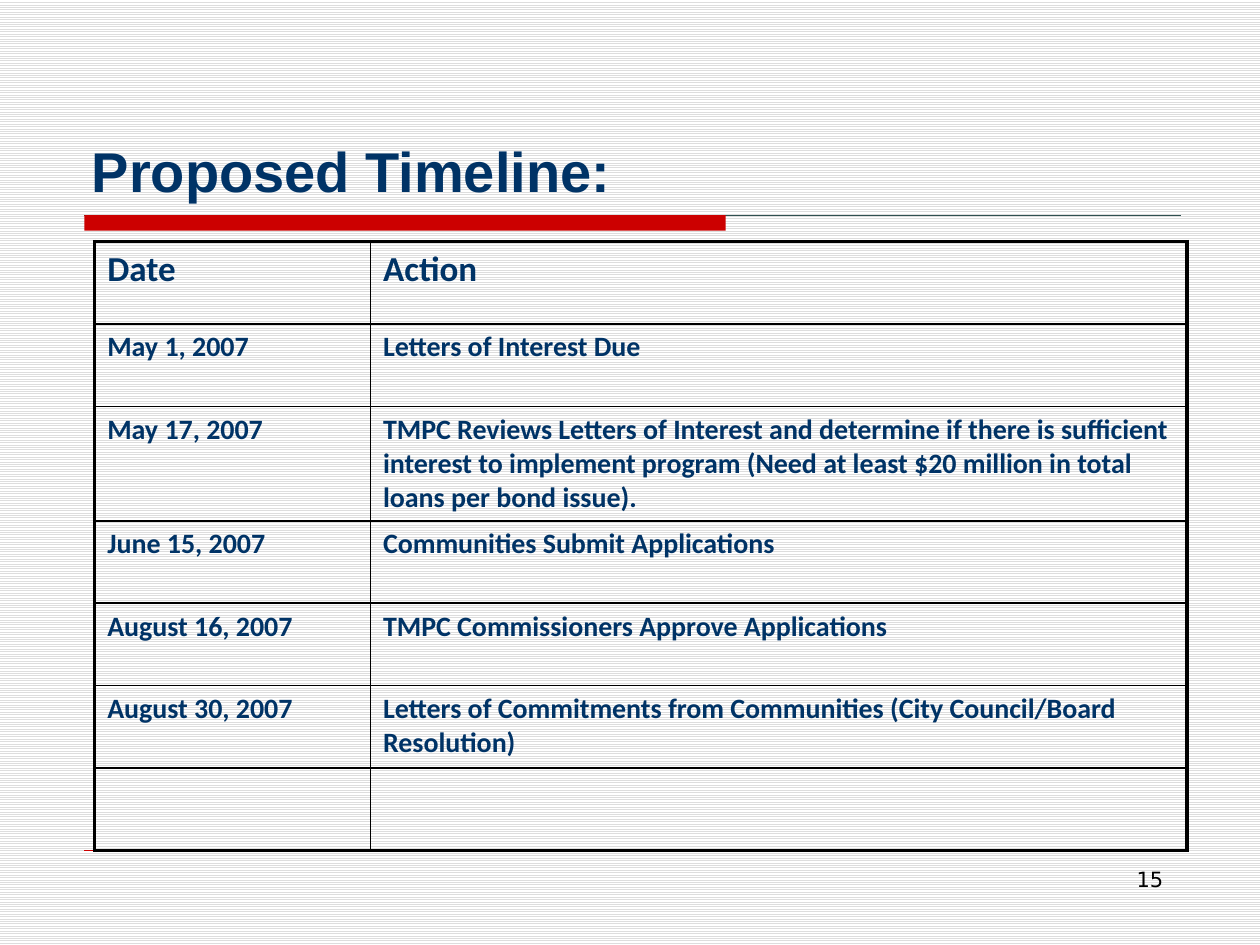
from dataclasses import dataclass

from lxml import etree
from pptx import Presentation, util as u
from pptx.dml.color import RGBColor
from pptx.enum import dml, shapes, text
from pptx.oxml import ns


@dataclass(frozen=True)
class Theme:
    navy: str = "003366"
    red: str = "CC0000"
    rule: str = "2F4F4F"
    black: str = "000000"
    white: str = "FFFFFF"
    stripe: str = "DDDDDD"
    title_font: str = "Arial"
    table_font: str = "Calibri"
    number_font: str = "DejaVu Sans"
    title_size: float = 32
    header_size: float = 20
    body_size: float = 16
    number_size: float = 12
    outer_border: float = 2.25
    inner_border: float = 1


THEME = Theme()

TIMELINE = [
    ("Date", "Action"),
    ("May 1, 2007", "Letters of Interest Due"),
    ("May 17, 2007", "TMPC Reviews Letters of Interest and determine if there is "
     "sufficient interest to implement program (Need at least $20 million in total "
     "loans per bond issue)."),
    ("June 15, 2007", "Communities Submit Applications"),
    ("August 16, 2007", "TMPC Commissioners Approve Applications"),
    ("August 30, 2007", "Letters of Commitments from Communities "
     "(City Council/Board Resolution)"),
    ("", ""),
]


def rgb(value):
    return RGBColor.from_string(value)


def write(frame, words, font, size, color, bold=False,
          align=text.PP_ALIGN.LEFT, anchor=None):
    frame.word_wrap = True
    if anchor is not None:
        frame.vertical_anchor = anchor
    paragraph = frame.paragraphs[0]
    paragraph.alignment = align
    run = paragraph.add_run()
    run.text = words
    run.font.name = font
    run.font.size = u.Pt(size)
    run.font.bold = bold
    run.font.color.rgb = rgb(color)


def add_rule(slide, left, top, width, color, weight):
    rule = slide.shapes.add_connector(
        shapes.MSO_CONNECTOR.STRAIGHT,
        u.Cm(left), u.Cm(top), u.Cm(left + width), u.Cm(top))
    rule.line.color.rgb = rgb(color)
    rule.line.width = u.Pt(weight)
    etree.SubElement(rule.element.spPr, ns.qn("a:effectLst"))


def paint_background(slide):
    fill = slide.background.fill
    fill.patterned()
    fill.pattern = dml.MSO_PATTERN.LIGHT_HORIZONTAL
    fill.fore_color.rgb = rgb(THEME.stripe)
    fill.back_color.rgb = rgb(THEME.white)


def add_accent(slide, left, top, width, height):
    add_rule(slide, left, top, width, THEME.rule, 0.75)
    bar = slide.shapes.add_shape(
        shapes.MSO_SHAPE.RECTANGLE,
        u.Cm(left), u.Cm(top), u.Cm(width * 0.585), u.Cm(height))
    bar.shadow.inherit = False
    bar.fill.solid()
    bar.fill.fore_color.rgb = rgb(THEME.red)
    bar.line.fill.background()


def add_label(slide, left, top, width, height, words, **style):
    label = slide.shapes.add_textbox(
        u.Cm(left), u.Cm(top), u.Cm(width), u.Cm(height))
    write(label.text_frame, words, **style)


def set_borders(cell, weights):
    properties = cell._tc.get_or_add_tcPr()
    for position, (side, weight) in enumerate(weights.items()):
        border = etree.Element(ns.qn(f"a:ln{side}"), w=str(u.Pt(weight)))
        fill = etree.SubElement(border, ns.qn("a:solidFill"))
        etree.SubElement(fill, ns.qn("a:srgbClr"), val=THEME.black)
        properties.insert(position, border)


def add_timeline(slide, left, top, width, height):
    row_count, column_count = len(TIMELINE), len(TIMELINE[0])
    table = slide.shapes.add_table(
        row_count, column_count,
        u.Cm(left), u.Cm(top), u.Cm(width), u.Cm(height)).table
    table.first_row = table.horz_banding = False

    date_width, row_height, review_row = 5.56, 1.66, 2
    table.columns[0].width = u.Cm(date_width)
    table.columns[1].width = u.Cm(width - date_width)
    for row in table.rows:
        row.height = u.Cm(row_height)
    table.rows[review_row].height = u.Cm(height - row_height * (row_count - 1))

    def weight(is_edge):
        return THEME.outer_border if is_edge else THEME.inner_border

    for r, entry in enumerate(TIMELINE):
        for c, words in enumerate(entry):
            cell = table.cell(r, c)
            cell.fill.background()
            set_borders(cell, {
                "L": weight(c == 0),
                "R": weight(c == column_count - 1),
                "T": weight(r == 0),
                "B": weight(r == row_count - 1),
            })
            if words:
                size = THEME.body_size if r else THEME.header_size
                write(cell.text_frame, words, THEME.table_font, size,
                      THEME.navy, bold=True)


def main():
    deck = Presentation()
    deck.slide_width, deck.slide_height = u.Cm(25.4), u.Cm(19.05)
    slide = deck.slides.add_slide(deck.slide_layouts[6])
    paint_background(slide)
    add_accent(slide, 1.7, 4.34, 22.1, 0.31)
    add_rule(slide, 1.7, 17.15, 22, THEME.red, 0.25)
    add_label(slide, 18.2, 17.35, 5.5, 1.32, "15", font=THEME.number_font,
              size=THEME.number_size, color=THEME.black,
              align=text.PP_ALIGN.RIGHT)
    add_label(slide, 1.6, 0.85, 22.22, 3.39, "Proposed Timeline:",
              font=THEME.title_font, size=THEME.title_size, color=THEME.navy,
              bold=True, anchor=text.MSO_ANCHOR.BOTTOM)
    add_timeline(slide, 1.91, 4.87, 22.02, 12.27)
    deck.save("out.pptx")


if __name__ == "__main__":
    main()
